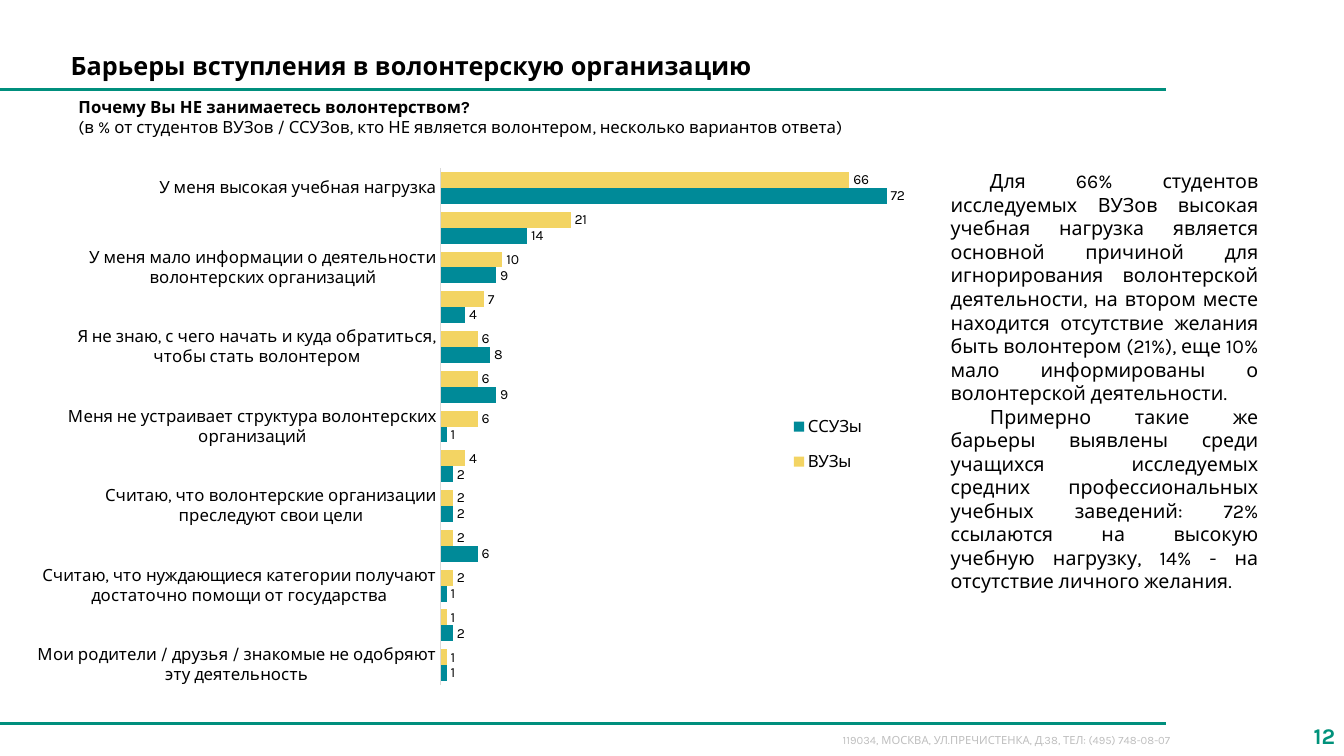
"""Builds the slide on barriers to joining a volunteer organisation."""
from lxml.etree import SubElement
from pptx import Presentation
from pptx.chart.data import CategoryChartData
from pptx.dml.color import RGBColor
from pptx.enum.chart import XL_CHART_TYPE, XL_LABEL_POSITION, XL_LEGEND_POSITION, XL_TICK_MARK
from pptx.enum.shapes import MSO_CONNECTOR
from pptx.enum.text import MSO_ANCHOR, PP_ALIGN
from pptx.oxml import parse_xml
from pptx.oxml.ns import nsdecls, qn
from pptx.util import Inches, Pt

FONT = "Karla"
COLORS = {"text": "000000", "rule": "008F7D", "number": "00927B", "address": "BFBFBF",
          "axis": "D9D9D9", "university": "F3D463", "college": "008A98"}

TITLE = "Барьеры вступления в волонтерскую организацию"
QUESTION = "Почему Вы НЕ занимаетесь волонтерством?"
BASE = "(в % от студентов ВУЗов / ССУЗов, кто НЕ является волонтером, несколько вариантов ответа)"
COMMENTS = [
    "Для 66% студентов исследуемых ВУЗов высокая учебная нагрузка является основной причиной "
    "для игнорирования волонтерской деятельности, на втором месте находится отсутствие желания "
    "быть волонтером (21%), еще 10% мало информированы о волонтерской деятельности.",
    "Примерно такие же барьеры выявлены среди учащихся исследуемых средних профессиональных "
    "учебных заведений: 72% ссылаются на высокую учебную нагрузку, 14% - на отсутствие "
    "личного желания.",
]
ADDRESS = "119034, МОСКВА, УЛ.ПРЕЧИСТЕНКА, Д.38, ТЕЛ: (495) 748-08-07"
SERIES = [("ВУЗы", "university"), ("ССУЗы", "college")]
BARRIERS = [
    ("У меня высокая учебная нагрузка", 66, 72),
    ("", 21, 14),
    ("У меня мало информации о деятельности волонтерских организаций", 10, 9),
    ("", 7, 4),
    ("Я не знаю, с чего начать и куда обратиться, чтобы стать волонтером", 6, 8),
    ("", 6, 9),
    ("Меня не устраивает структура волонтерских организаций", 6, 1),
    ("", 4, 2),
    ("Считаю, что волонтерские организации преследуют свои цели", 2, 2),
    ("", 2, 6),
    ("Считаю, что нуждающиеся категории получают достаточно помощи от государства", 2, 1),
    ("", 1, 2),
    ("Мои родители / друзья / знакомые не одобряют эту деятельность", 1, 1),
]
RULE_TOPS = (0.89, 7.18)
RULE_END = 11.56
PLOT_AREA = (0.446, 0.029, 0.549, 0.943)
LEGEND_AREA = (0.815, 0.455, 0.12, 0.155)


def color(name):
    return RGBColor.from_string(COLORS[name])


def style_font(font, size, name="text", bold=False):
    font.name, font.size, font.bold = FONT, Pt(size), bold
    font.color.rgb = color(name)


def write(frame, lines, size, name="text", align=PP_ALIGN.LEFT, anchor=MSO_ANCHOR.TOP, indent=0):
    frame.word_wrap = True
    frame.vertical_anchor = anchor
    for index, (text, bold) in enumerate(lines):
        para = frame.add_paragraph() if index else frame.paragraphs[0]
        para.alignment = align
        para.space_before = Pt(0)
        if indent:
            para._p.get_or_add_pPr().set("indent", str(Inches(indent)))
        span = para.add_run()
        span.text = text
        style_font(span.font, size, name, bold)


def add_text(page, area, lines, size, **options):
    box = page.shapes.add_textbox(*map(Inches, area))
    write(box.text_frame, lines, size, **options)


def add_rule(page, top):
    rule = page.shapes.add_connector(
        MSO_CONNECTOR.STRAIGHT, 0, Inches(top), Inches(RULE_END), Inches(top))
    rule.line.color.rgb = color("rule")
    rule.line.width = Pt(2)
    SubElement(rule._element.spPr, qn("a:effectLst"))


def manual_layout(area, target=""):
    inner = f'<c:layoutTarget val="{target}"/>' if target else ""
    modes = '<c:xMode val="edge"/><c:yMode val="edge"/>'
    sides = "".join(f'<c:{side} val="{value}"/>' for side, value in zip("xywh", area))
    return parse_xml(f'<c:layout {nsdecls("c")}><c:manualLayout>{inner}{modes}{sides}'
                     '</c:manualLayout></c:layout>')


def add_barrier_chart(page, area):
    names, *columns = zip(*BARRIERS)
    data = CategoryChartData(number_format="#,##0")
    data.categories = names
    for (label, _), values in zip(SERIES, columns):
        data.add_series(label, values)
    chart = page.shapes.add_chart(
        XL_CHART_TYPE.BAR_CLUSTERED, *map(Inches, area), data).chart
    chart.has_title = False
    style_font(chart.font, 10)

    plot = chart.plots[0]
    plot.vary_by_categories = False
    plot.gap_width, plot.overlap = 50, 0
    for series, (_, name) in zip(plot.series, SERIES):
        series.format.fill.solid()
        series.format.fill.fore_color.rgb = color(name)
        labels = series.data_labels
        labels.show_value = True
        labels.number_format, labels.number_format_is_linked = "#,##0", False
        labels.position = XL_LABEL_POSITION.OUTSIDE_END
        style_font(labels.font, 10)

    reasons, percent = chart.category_axis, chart.value_axis
    reasons.reverse_order = True
    reasons.major_tick_mark = reasons.minor_tick_mark = XL_TICK_MARK.NONE
    reasons.format.line.color.rgb = color("axis")
    reasons.format.line.width = Pt(0.75)
    style_font(reasons.tick_labels.font, 12)
    percent.minimum_scale, percent.maximum_scale = 0, 80
    percent.has_major_gridlines = False
    percent.visible = False

    chart.has_legend = True
    legend = chart.legend
    legend.position = XL_LEGEND_POSITION.RIGHT
    legend.include_in_layout = False
    style_font(legend.font, 12)
    for parent, layout in ((chart._chartSpace.chart.plotArea, manual_layout(PLOT_AREA, "inner")),
                           (legend._element, manual_layout(LEGEND_AREA))):
        for previous in parent.findall(qn("c:layout")):
            parent.remove(previous)
        position = parent.find(qn("c:legendPos"))
        if position is None:
            parent.insert(0, layout)
        else:
            position.addnext(layout)


def main():
    deck = Presentation()
    deck.slide_width, deck.slide_height = Inches(13.33), Inches(7.5)
    page = deck.slides.add_slide(deck.slide_layouts[5])
    for top in RULE_TOPS:
        add_rule(page, top)
    title = page.shapes.title
    title.left, title.top, title.width, title.height = map(Inches, (0.6, 0.45, 11.35, 0.4))
    write(title.text_frame, [(TITLE, True)], 18, anchor=MSO_ANCHOR.MIDDLE)
    add_text(page, (0.68, 0.91, 10.72, 0.5), [(QUESTION, True), (BASE, False)], 12)
    add_barrier_chart(page, (0.37, 1.51, 8.96, 5.44))
    add_text(page, (9.33, 1.63, 3.25, 4.11), [(text, False) for text in COMMENTS], 14,
             align=PP_ALIGN.JUSTIFY, indent=0.39)
    add_text(page, (8.26, 7.23, 3.84, 0.24), [(ADDRESS, False)], 8, name="address")
    add_text(page, (12.65, 7.1, 0.69, 0.4), [("12", True)], 16, name="number",
             align=PP_ALIGN.RIGHT, anchor=MSO_ANCHOR.MIDDLE)
    deck.save("out.pptx")


if __name__ == "__main__":
    main()
